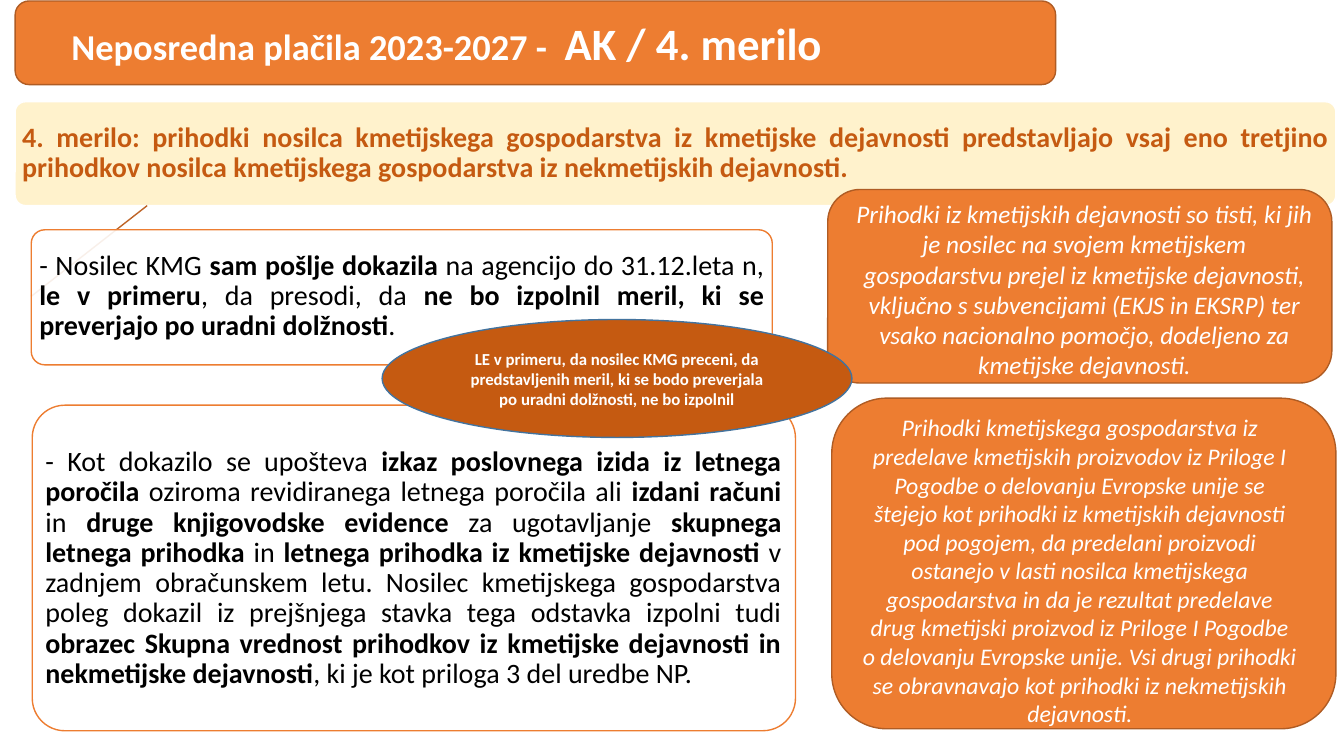
from dataclasses import dataclass

from lxml import etree
from pptx import Presentation
from pptx.dml.color import RGBColor
from pptx.enum.shapes import MSO_CONNECTOR, MSO_SHAPE
from pptx.enum.text import MSO_ANCHOR, PP_ALIGN
from pptx.oxml.ns import qn
from pptx.util import Emu, Pt

ROUND, OVAL = MSO_SHAPE.ROUNDED_RECTANGLE, MSO_SHAPE.OVAL
LINE = MSO_CONNECTOR.STRAIGHT
TOP, MIDDLE = MSO_ANCHOR.TOP, MSO_ANCHOR.MIDDLE
LEFT, CENTER, FULL = PP_ALIGN.LEFT, PP_ALIGN.CENTER, PP_ALIGN.JUSTIFY
SCALE = 9144  # EMU in one px, 100 px to the inch


@dataclass(frozen=True)
class Theme:
    font: str = "Calibri"
    white: str = "FFFFFF"
    black: str = "000000"
    cream: str = "FFF2CC"
    orange: str = "ED7D31"
    rust: str = "C55A11"
    edge: str = "AF5C24"
    link: str = "BE6427"
    blue: str = "43739E"
    title: int = 32
    lead: int = 26
    body: int = 20
    note: int = 18
    small: int = 17
    tiny: int = 12


def px(*nums):
    return [Emu(n * SCALE) for n in nums]


def rgb(code):
    return RGBColor.from_string(code)


def write(frame, text, size, color, font, bold=False, italic=False,
          align=LEFT, anchor=TOP, space=None, pad=(10, 5), mark=None):
    """Fill a frame; parts between asterisks take the format in mark."""
    frame.word_wrap = True
    frame.vertical_anchor = anchor
    frame.margin_left = frame.margin_right = px(pad[0])[0]
    frame.margin_top = frame.margin_bottom = px(pad[1])[0]
    para = frame.paragraphs[0]
    para.alignment = align
    para.line_spacing = space
    for i, part in enumerate(text.split("*")):
        if not part:
            continue
        look = {"size": size, "bold": bold}
        if i % 2:
            look.update(mark or {"bold": True})
        run = para.add_run()
        run.text = part
        run.font.name = font
        run.font.size = Pt(look["size"])
        run.font.bold = look["bold"]
        run.font.italic = italic
        run.font.color.rgb = rgb(color)


class Page:
    def __init__(self, deck, theme):
        self.theme = theme
        self.slide = deck.slides.add_slide(deck.slide_layouts[6])

    def box(self, spot, fill, line, kind=ROUND, bend=None, alpha=None):
        shape = self.slide.shapes.add_shape(kind, *px(*spot))
        shape.shadow.inherit = False
        shape.fill.solid()
        shape.fill.fore_color.rgb = rgb(fill)
        shape.line.color.rgb = rgb(line)
        shape.line.width = Pt(1)
        if bend is not None:
            shape.adjustments[0] = bend
        if alpha is not None:
            tint = shape.fill._xPr.find(".//" + qn("a:srgbClr"))
            etree.SubElement(tint, qn("a:alpha"), val=str(alpha * 1000))
        return shape

    def text(self, spot, text, size, color, **form):
        box = self.slide.shapes.add_textbox(*px(*spot))
        write(box.text_frame, text, size, color, self.theme.font, **form)

    def panel(self, spot, inner, text, color, fill, line, alpha=None, **form):
        """Rounded card with a justified text."""
        self.box(spot, fill, line, bend=0.1, alpha=alpha)
        self.text(inner, text, self.theme.body, color, align=FULL,
                  anchor=MIDDLE, space=0.9, pad=(4, 3), **form)

    def note(self, spot, inner, text, size):
        """Orange card with a centred italic text."""
        look = self.theme
        self.box(spot, look.orange, look.edge)
        self.text(inner, text, size, look.white, italic=True, align=CENTER)

    def oval(self, spot, text):
        look = self.theme
        shape = self.box(spot, look.rust, look.blue, kind=OVAL)
        write(shape.text_frame, text, look.tiny, look.white, look.font,
              bold=True, align=CENTER, anchor=MIDDLE)

    def link(self, start, end):
        line = self.slide.shapes.add_connector(LINE, *px(*start, *end))
        line.line.color.rgb = rgb(self.theme.link)
        line.line.width = Pt(1)
        etree.SubElement(line._element.spPr, qn("a:effectLst"))


def main():
    deck = Presentation()
    deck.slide_width, deck.slide_height = px(1333, 750)
    look = Theme()
    page = Page(deck, look)

    # Criterion and its evidence
    page.panel(
        (15, 101, 1310, 103), (18, 104, 1304, 97),
        "4. merilo: prihodki nosilca kmetijskega gospodarstva iz kmetijske "
        "dejavnosti predstavljajo vsaj eno tretjino prihodkov nosilca "
        "kmetijskega gospodarstva iz nekmetijskih dejavnosti.",
        look.rust, look.cream, look.white, bold=True)
    page.link((146, 204), (31, 294))
    proofs = [
        ((31, 228, 735, 134), (35, 231, 727, 126),
         "- Nosilec KMG *sam pošlje dokazila *na agencijo do 31.12.leta n, "
         "*le v primeru*, da presodi, da *ne bo izpolnil meril, ki se "
         "preverjajo po uradni dolžnosti*."),
        ((32, 402, 757, 323), (41, 412, 738, 304),
         "- Kot dokazilo se upošteva *izkaz poslovnega izida iz letnega "
         "poročila* oziroma revidiranega letnega poročila ali *izdani "
         "računi *in *druge knjigovodske evidence *za ugotavljanje "
         "*skupnega letnega prihodka* in *letnega prihodka iz kmetijske "
         "dejavnosti *v zadnjem obračunskem letu. Nosilec kmetijskega "
         "gospodarstva poleg dokazil iz prejšnjega stavka tega odstavka "
         "izpolni tudi *obrazec Skupna vrednost prihodkov iz kmetijske "
         "dejavnosti in nekmetijske dejavnosti*, ki je kot priloga 3 del "
         "uredbe NP."),
    ]
    for spot, inner, text in proofs:
        page.panel(spot, inner, text, look.black, look.white, look.orange,
                   alpha=90)

    # Title bar
    page.box((15, 1, 1032, 83), look.orange, look.edge)
    page.text((61, 11, 1009, 64),
              "Neposredna plačila 2023-2027 -  *AK / 4. merilo*",
              look.lead, look.white, bold=True, mark={"size": look.title})

    # Notes on income
    page.note(
        (825, 395, 500, 328), (845, 405, 452, 353),
        "Prihodki kmetijskega gospodarstva iz predelave kmetijskih "
        "proizvodov iz Priloge I Pogodbe o delovanju Evropske unije se "
        "štejejo kot prihodki iz kmetijskih dejavnosti pod pogojem, da "
        "predelani proizvodi ostanejo v lasti nosilca kmetijskega "
        "gospodarstva in da je rezultat predelave drug kmetijski proizvod "
        "iz Priloge I Pogodbe o delovanju Evropske unije. Vsi drugi "
        "prihodki se obravnavajo kot prihodki iz nekmetijskih dejavnosti.",
        look.small)
    page.note(
        (821, 188, 500, 192), (836, 192, 479, 222),
        "Prihodki iz kmetijskih dejavnosti so tisti, ki jih je nosilec na "
        "svojem kmetijskem gospodarstvu prejel iz kmetijske dejavnosti, "
        "vključno s subvencijami (EKJS in EKSRP) ter vsako nacionalno "
        "pomočjo, dodeljeno za kmetijske dejavnosti.",
        look.note)

    # Condition
    page.oval(
        (379, 317, 466, 117),
        "LE v primeru, da nosilec KMG preceni, da predstavljenih meril, ki "
        "se bodo preverjala po uradni dolžnosti, ne bo izpolnil")

    deck.save("out.pptx")


if __name__ == "__main__":
    main()
